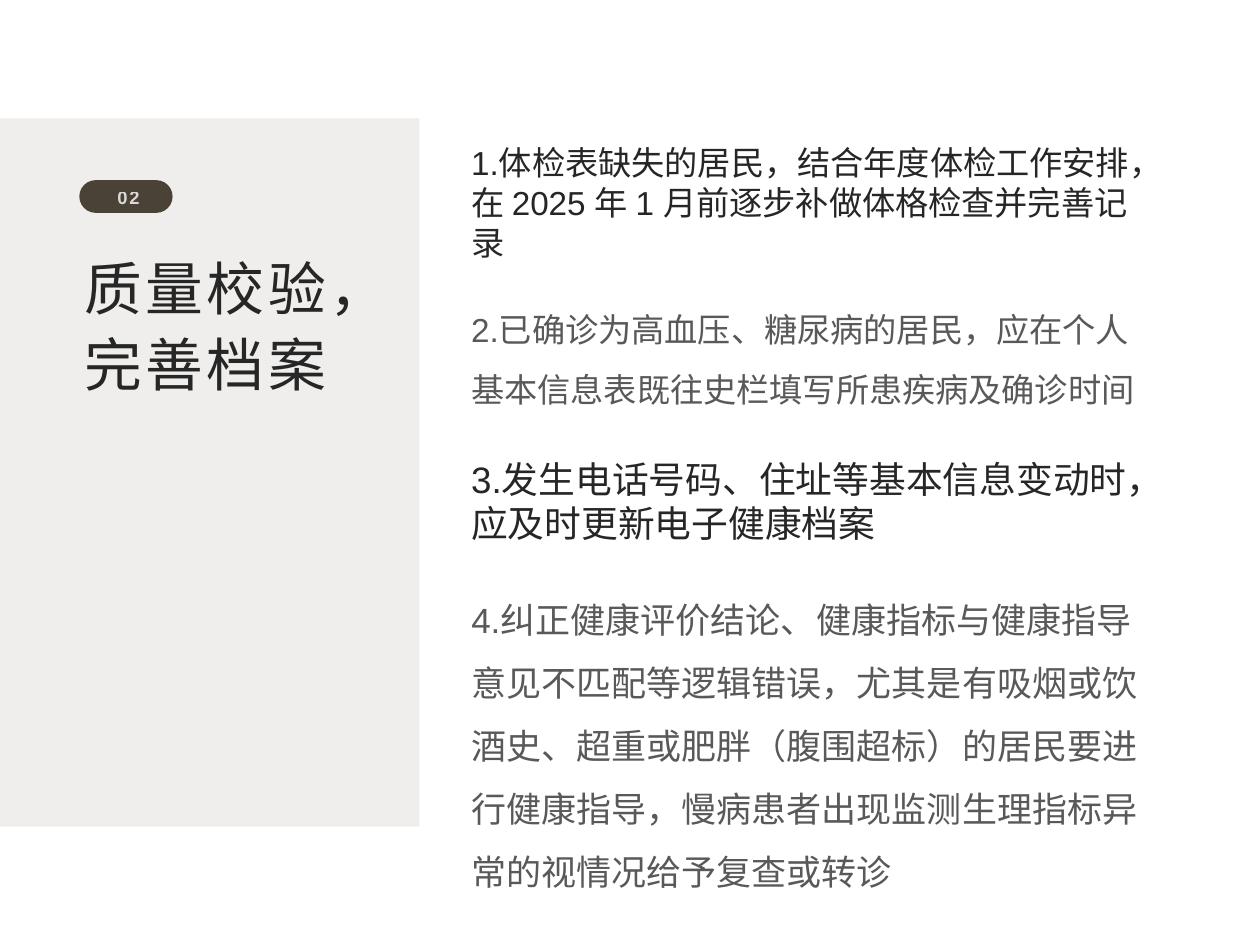
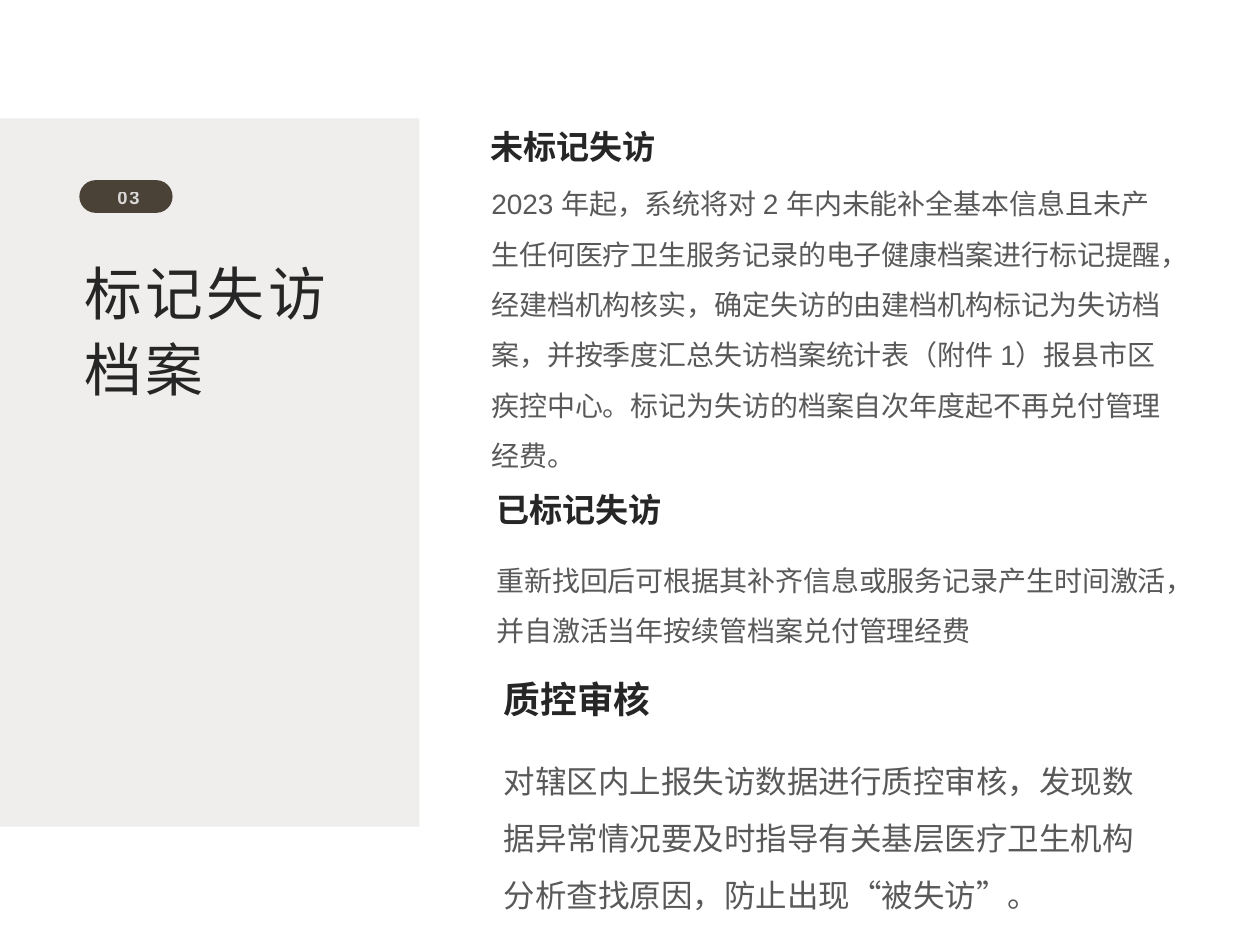
from dataclasses import dataclass

from lxml.etree import SubElement
from pptx import Presentation
from pptx.dml.color import RGBColor
from pptx.enum.lang import MSO_LANGUAGE_ID
from pptx.enum.shapes import MSO_SHAPE
from pptx.enum.text import MSO_ANCHOR, PP_ALIGN
from pptx.oxml.ns import qn
from pptx.util import Pt

EMU_PER_PX = 9144  # 100 px to the inch


def px(length):
    return length * EMU_PER_PX


@dataclass(frozen=True)
class Theme:
    font: str = "Arial"
    panel: str = "EFEEEC"
    badge: str = "4A4237"
    badge_text: str = "FFFFFF"
    heading: str = "262626"
    body: str = "595959"
    badge_size: float = 10.5
    title_size: float = 33
    heading_size: float = 18.9


class Deck:
    COLUMN_WIDTH = 554
    NARROW_INSETS = (7, 4)
    TITLE_INSETS = (4, 5)
    DEFAULT_INSETS = (10, 5)

    def __init__(self, theme):
        self.theme = theme
        self.presentation = Presentation()
        self.presentation.slide_width = px(1000)
        self.presentation.slide_height = px(750)
        self.slide = None

    def section(self, number, title, title_top):
        """Start a slide with the side panel, numbered badge and title."""
        self.slide = self.presentation.slides.add_slide(
            self.presentation.slide_layouts[6])
        self.block(self.slide.shapes, MSO_SHAPE.RECTANGLE,
                   (0, 94, 333, 562), self.theme.panel)
        self.badge(number)
        paragraph, = self.text((63, title_top, 221, 335), [title],
                               self.theme.title_size, self.theme.heading,
                               insets=self.TITLE_INSETS)
        paragraph.line_spacing = 1.1
        self.track(paragraph, 2)

    def block(self, shapes, preset, box, color):
        shape = shapes.add_shape(preset, *map(px, box))
        shape.shadow.inherit = False
        shape.fill.solid()
        shape.fill.fore_color.rgb = RGBColor.from_string(color)
        shape.line.fill.background()
        return shape

    def badge(self, number):
        group = self.slide.shapes.add_group_shape()
        pill = self.block(group.shapes, MSO_SHAPE.ROUNDED_RECTANGLE,
                          (63, 143, 74, 26), self.theme.badge)
        pill.adjustments[0] = 0.5
        paragraph, = self.text((67, 144, 70, 25), [number],
                               self.theme.badge_size, self.theme.badge_text,
                               bold=True, shapes=group.shapes)
        paragraph.alignment = PP_ALIGN.CENTER
        self.track(paragraph, 1)
        color = next(paragraph.font._element.iter(qn("a:srgbClr")))
        SubElement(color, qn("a:alpha")).set("val", "80000")

    def track(self, paragraph, points):
        """Set the letter spacing of a paragraph."""
        paragraph.font._element.set("spc", str(points * 100))

    def text(self, box, lines, size, color, bold=False,
             anchor=MSO_ANCHOR.TOP, insets=NARROW_INSETS, shapes=None):
        shapes = self.slide.shapes if shapes is None else shapes
        frame = shapes.add_textbox(*map(px, box)).text_frame
        frame.word_wrap = True
        frame.vertical_anchor = anchor
        frame.margin_left = frame.margin_right = px(insets[0])
        frame.margin_top = frame.margin_bottom = px(insets[1])
        frame.text = "\n".join(lines)
        for paragraph in frame.paragraphs:
            font = paragraph.font
            font.name = self.theme.font
            font.size = Pt(size)
            font.bold = bold
            font.color.rgb = RGBColor.from_string(color)
            font.language_id = MSO_LANGUAGE_ID.SIMPLIFIED_CHINESE
        return frame.paragraphs

    def heading(self, left, top, height, *lines, size=None, bold=False,
                width=COLUMN_WIDTH, anchor=MSO_ANCHOR.MIDDLE,
                insets=NARROW_INSETS):
        self.text((left, top, width, height), lines,
                  size or self.theme.heading_size, self.theme.heading,
                  bold, anchor, insets)

    def body(self, left, top, height, content, size, width=COLUMN_WIDTH,
             insets=NARROW_INSETS):
        paragraph, = self.text((left, top, width, height), [content], size,
                               self.theme.body, insets=insets)
        paragraph.line_spacing = 1.5
        paragraph.space_after = Pt(10)


def add_quality_check(deck):
    deck.section("02", "质量校验，完善档案", 190)
    left = 367
    deck.heading(left, 107, 107,
                 "1.体检表缺失的居民，结合年度体检工作安排，",
                 "在 2025 年 1 月前逐步补做体格检查并完善记录", size=19)
    deck.body(left, 226, 106,
              "2.已确诊为高血压、糖尿病的居民，应在个人基本信息表"
              "既往史栏填写所患疾病及确诊时间", 19)
    deck.heading(left, 351, 93,
                 "3.发生电话号码、住址等基本信息变动时，应及时更新电子健康档案",
                 size=21)
    deck.body(left, 454, 194,
              "4.纠正健康评价结论、健康指标与健康指导意见不匹配等逻辑错误，"
              "尤其是有吸烟或饮酒史、超重或肥胖（腹围超标）的居民要进行健康指导，"
              "慢病患者出现监测生理指标异常的视情况给予复查或转诊", 20, width=561)


def add_lost_records(deck):
    deck.section("03", "标记失访档案", 194)
    deck.heading(382, 95, 43, "未标记失访", bold=True)
    deck.body(383, 131, 225,
              "2023 年起，系统将对 2 年内未能补全基本信息且未产生任何医疗卫生"
              "服务记录的电子健康档案进行标记提醒，经建档机构核实，确定失访的由"
              "建档机构标记为失访档案，并按季度汇总失访档案统计表（附件 1）报县市区"
              "疾控中心。标记为失访的档案自次年度起不再兑付管理经费。", 16)
    deck.heading(387, 383, 43, "已标记失访", bold=True)
    deck.body(387, 430, 123,
              "重新找回后可根据其补齐信息或服务记录产生时间激活，"
              "并自激活当年按续管档案兑付管理经费", 16)
    deck.heading(390, 532, 64, "质控审核", size=21, bold=True, width=143,
                 anchor=MSO_ANCHOR.TOP, insets=deck.DEFAULT_INSETS)
    deck.body(390, 585, 165,
              "对辖区内上报失访数据进行质控审核，发现数据异常情况要及时指导"
              "有关基层医疗卫生机构分析查找原因，防止出现“被失访”。",
              18, width=540, insets=deck.DEFAULT_INSETS)


def main():
    deck = Deck(Theme())
    add_quality_check(deck)
    add_lost_records(deck)
    deck.presentation.save("out.pptx")


if __name__ == "__main__":
    main()
